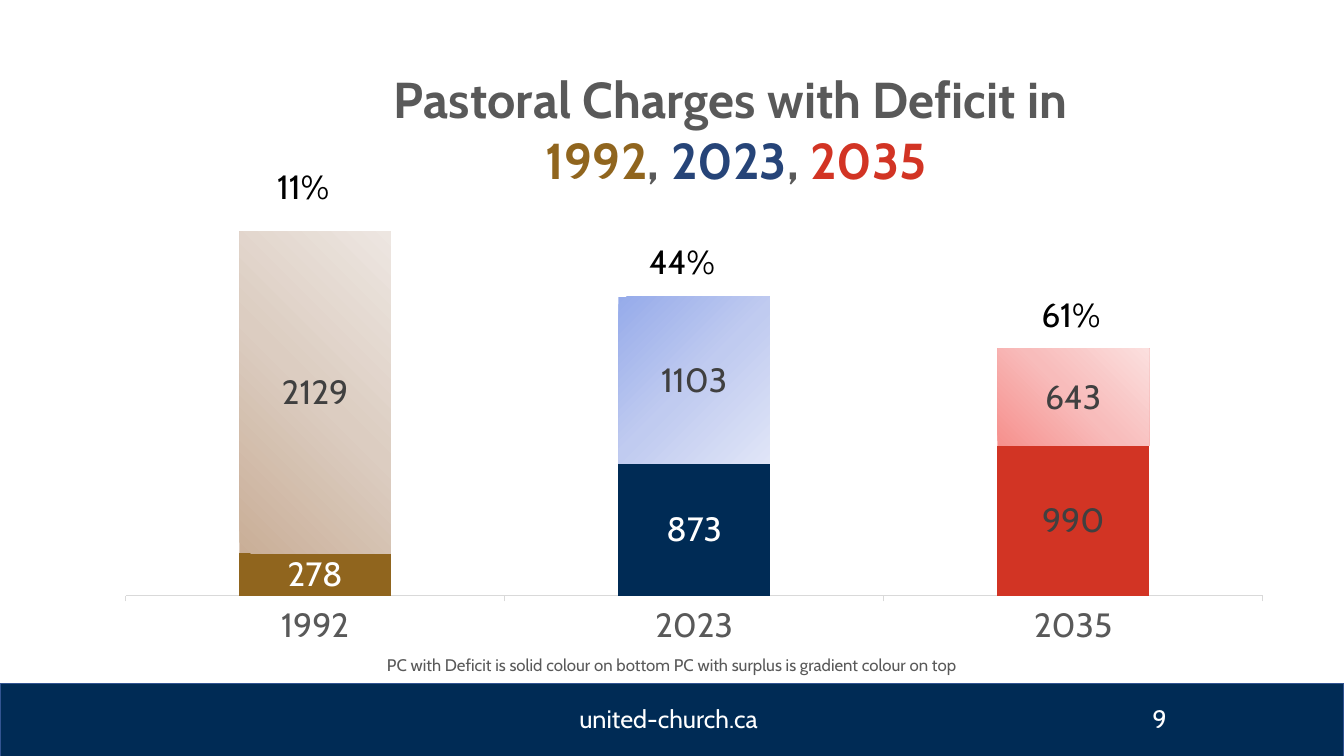
import copy

import pptx
import pptx.chart.data
import pptx.dml.color
import pptx.enum.chart
import pptx.enum.shapes
import pptx.enum.text
import pptx.oxml
import pptx.oxml.ns
import pptx.util
from pptx.util import Inches

RGBColor = pptx.dml.color.RGBColor
Align = pptx.enum.text.PP_ALIGN
CENTER_LABEL = pptx.enum.chart.XL_LABEL_POSITION.CENTER

FONT = "Cabin"
WHITE = RGBColor(0xFF, 0xFF, 0xFF)
BLACK = RGBColor(0x00, 0x00, 0x00)
GREY = RGBColor(0x59, 0x59, 0x59)
DARK_GREY = RGBColor(0x40, 0x40, 0x40)
AXIS_GREY = RGBColor(0xD9, 0xD9, 0xD9)
NAVY = RGBColor(0x00, 0x2B, 0x55)
BAND_EDGE = RGBColor(0x32, 0x54, 0x91)
TITLE_BLUE = RGBColor(0x26, 0x44, 0x78)
BROWN = RGBColor(0x90, 0x65, 0x1E)
RED = RGBColor(0xD2, 0x34, 0x24)
SERIES_BLUE = RGBColor(0x44, 0x72, 0xC4)
SERIES_ORANGE = RGBColor(0xED, 0x7D, 0x31)

DEFICIT_COLOURS = [BROWN, NAVY, RED]
# Counter-clockwise angle and the colours at 0, 50 and 100 percent
SURPLUS_GRADIENTS = [
    (45, [RGBColor(0xC9, 0xAE, 0x97), RGBColor(0xDC, 0xCD, 0xC1), RGBColor(0xED, 0xE6, 0xE1)]),
    (315, [RGBColor(0x96, 0xAB, 0xEA), RGBColor(0xC0, 0xCB, 0xF0), RGBColor(0xE0, 0xE5, 0xF7)]),
    (45, [RGBColor(0xF6, 0x90, 0x8D), RGBColor(0xF8, 0xBC, 0xBB), RGBColor(0xFB, 0xDF, 0xDE)]),
]


def style_font(font, size, colour, bold=False):
    font.name = FONT
    font.size = pptx.util.Pt(size)
    font.color.rgb = colour
    font.bold = bold


def place_in_chart(element, **layout):
    """Give a chart part a manual layout in fractions of the chart."""
    old = element.find(pptx.oxml.ns.qn("c:layout"))
    position = 0
    if old is not None:
        position = element.index(old)
        element.remove(old)
    settings = "".join(f'<c:{name} val="{value}"/>' for name, value in layout.items())
    element.insert(position, pptx.oxml.parse_xml(
        f'<c:layout {pptx.oxml.ns.nsdecls("c")}><c:manualLayout>{settings}'
        "</c:manualLayout></c:layout>"))


presentation = pptx.Presentation()
presentation.slide_width = Inches(13.33)
presentation.slide_height = Inches(7.5)
slide = presentation.slides.add_slide(presentation.slide_layouts[6])

# Footer band
band = slide.shapes.add_shape(pptx.enum.shapes.MSO_SHAPE.RECTANGLE,
                              0, Inches(6.78), Inches(13.33), Inches(0.75))
band.shadow.inherit = False
band.fill.solid()
band.fill.fore_color.rgb = NAVY
band.line.color.rgb = BAND_EDGE
band.line.width = pptx.util.Pt(1)

# Stacked columns
charge_data = pptx.chart.data.CategoryChartData()
charge_data.categories = ["1992", "2023", "2035"]
charge_data.add_series("Series 1", [278, 873, 990])
charge_data.add_series("Series 2", [2129, 1103, 643])
chart = slide.shapes.add_chart(
    pptx.enum.chart.XL_CHART_TYPE.COLUMN_STACKED,
    Inches(0.98), Inches(0.52), Inches(11.58), Inches(6.23), charge_data).chart
style_font(chart.font, 10, BLACK)
chart.has_legend = False
columns = chart.plots[0]
columns.gap_width = 150
columns.overlap = 100
columns.vary_by_categories = False

value_axis = chart.value_axis
value_axis.minimum_scale = 0
value_axis.maximum_scale = 3000
value_axis.has_major_gridlines = False
value_axis.visible = False

year_axis = chart.category_axis
year_axis.major_tick_mark = pptx.enum.chart.XL_TICK_MARK.OUTSIDE
year_axis.format.line.color.rgb = AXIS_GREY
year_axis.format.line.width = pptx.util.Pt(0.75)
style_font(year_axis.tick_labels.font, 24, GREY)

deficit, surplus = columns.series
for series, colour in [(deficit, SERIES_BLUE), (surplus, SERIES_ORANGE)]:
    series.format.fill.solid()
    series.format.fill.fore_color.rgb = colour
    series.data_labels.show_value = True
    series.data_labels.position = CENTER_LABEL
    style_font(series.data_labels.font, 24, DARK_GREY)

for index, colour in enumerate(DEFICIT_COLOURS):
    fill = deficit.points[index].format.fill
    fill.solid()
    fill.fore_color.rgb = colour
for index in (0, 1):
    label = deficit.points[index].data_label
    style_font(label.font, 24, WHITE)
    label.position = CENTER_LABEL

for index, (angle, colours) in enumerate(SURPLUS_GRADIENTS):
    fill = surplus.points[index].format.fill
    fill.gradient()
    fill.gradient_angle = angle
    stop_list = surplus._element.xpath(".//a:gsLst")[-1]
    stop_list.insert(1, copy.deepcopy(stop_list[0]))
    for stop, position, colour in zip(fill.gradient_stops, (0, 0.5, 1), colours):
        stop.position = position
        stop.color.rgb = colour

# Chart title
heading = chart.chart_title.text_frame
heading_lines = [
    [("Pastoral Charges with Deficit in ", GREY)],
    [("1992", BROWN), (", ", GREY), ("2023", TITLE_BLUE), (", ", GREY), ("2035", RED)],
]
for index, pieces in enumerate(heading_lines):
    line = heading.add_paragraph() if index else heading.paragraphs[0]
    line.alignment = Align.CENTER
    for text, colour in pieces:
        run = line.add_run()
        run.text = text
        style_font(run.font, 36, colour, bold=True)

place_in_chart(chart.chart_title._element, xMode="edge", yMode="edge", x=0.25, y=0.02)
place_in_chart(chart._chartSpace.chart.plotArea, layoutTarget="inner", xMode="edge",
               yMode="edge", x=0.023, y=0.143, w=0.974, h=0.722)

# Footer text, chart note and deficit shares
captions = [
    ("united-church.ca", 4.42, 6.93, 4.42, 0.4, Align.CENTER, 18, WHITE),
    ("9", 9.42, 6.93, 2.25, 0.4, Align.RIGHT, 18, WHITE),
    ("PC with Deficit is solid colour on bottom PC with surplus is gradient colour on top",
     2.22, 6.45, 8.89, 0.3, Align.CENTER, 12, GREY),
    ("11%", 2.65, 1.6, 1.64, 0.5, Align.LEFT, 24, BLACK),
    ("44%", 6.34, 2.34, 1.07, 0.5, Align.LEFT, 24, BLACK),
    ("61%", 10.23, 2.87, 0.88, 0.5, Align.LEFT, 24, BLACK),
]
for text, left, top, width, height, alignment, size, colour in captions:
    frame = slide.shapes.add_textbox(
        Inches(left), Inches(top), Inches(width), Inches(height)).text_frame
    frame.word_wrap = True
    frame.paragraphs[0].alignment = alignment
    run = frame.paragraphs[0].add_run()
    run.text = text
    style_font(run.font, size, colour)

presentation.save("out.pptx")
